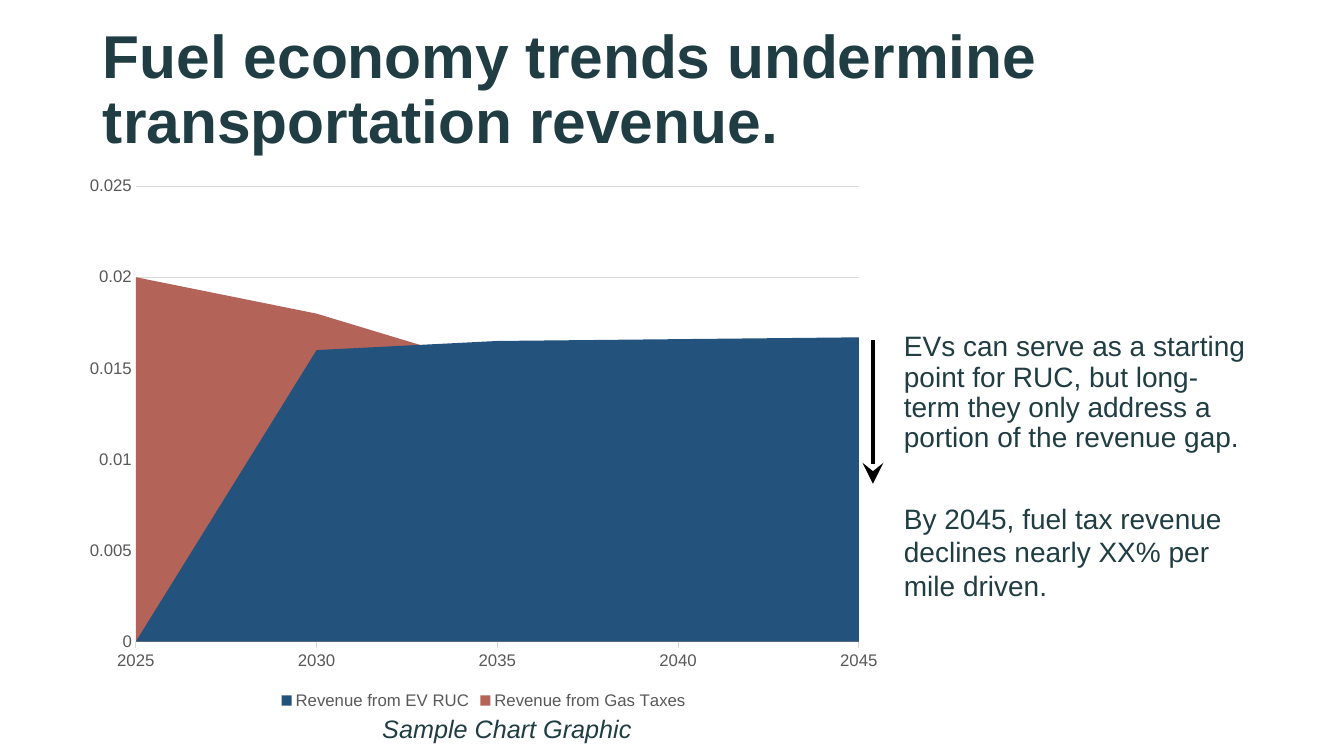
import pptx
import pptx.util
import pptx.chart.data
import pptx.dml.color
import pptx.enum.chart
import pptx.enum.shapes
import pptx.enum.text
import pptx.oxml
import pptx.oxml.ns
from pptx.util import Cm, Pt

FONT = "Arial"
INK, GREY, RULE = "1F3D42", "595959", "D9D9D9"
ALIGN = pptx.enum.text.PP_ALIGN
FIT = pptx.enum.text.MSO_AUTO_SIZE

TITLE = "Fuel economy trends undermine transportation revenue."
TITLE_BOX = (2.34, 1.02, 28.96, 3.05)
# text, box in cm, font, paragraph format
NOTES = [
    ("EVs can serve as a starting point for RUC, but long-term they only "
     "address a portion of the revenue gap.",
     (22.53, 8.26, 9.19, 4.24), {"size": Pt(20)},
     {"line_spacing": 0.9, "space_before": Pt(10)}),
    ("By 2045, fuel tax revenue declines nearly XX% per mile driven.",
     (22.53, 12.5, 8.74, 2.82), {"size": Pt(20)}, {}),
    ("Sample Chart Graphic",
     (3.02, 17.86, 19.51, 1.02), {"size": Pt(18), "italic": True},
     {"alignment": ALIGN.CENTER}),
]
YEARS = ["2025", "2030", "2035", "2040", "2045"]
SERIES = [
    ("Revenue from EV RUC", "23527C", (0, 0.016, 0.0165, 0.0166, 0.0167)),
    ("Revenue from Gas Taxes", "B36358", (0.02, 0.018, 0.015, 0.01, 0.009)),
]
CHART_BOX = (1.85, 4.19, 20.68, 13.79)
ARROW = (22, 8.56, 22, 12.19)


def rgb(code):
    return pptx.dml.color.RGBColor.from_string(code)


def put(item, values):
    """Set each named attribute on item."""
    for name, value in values.items():
        setattr(item, name, value)


def style(font, color=INK, **values):
    put(font, {"name": FONT, **values})
    font.color.rgb = rgb(color)


def cms(box):
    return [Cm(n) for n in box]


def rule(line):
    put(line, {"width": Pt(0.75)})
    line.color.rgb = rgb(RULE)


def add_title(slide):
    title = slide.shapes.title
    put(title, dict(zip(("left", "top", "width", "height"), cms(TITLE_BOX))))
    frame = title.text_frame
    frame.text = TITLE
    put(frame, {"auto_size": FIT.NONE, "word_wrap": True,
                "vertical_anchor": pptx.enum.text.MSO_ANCHOR.BOTTOM})
    para = frame.paragraphs[0]
    put(para, {"alignment": ALIGN.LEFT, "line_spacing": 0.9})
    style(para.runs[0].font, size=Pt(43.2), bold=True)


def add_note(slide, text, box, font, form):
    frame = slide.shapes.add_textbox(*cms(box)).text_frame
    frame.text = text
    put(frame, {"word_wrap": True, "auto_size": FIT.NONE})
    para = frame.paragraphs[0]
    put(para, form)
    style(para.runs[0].font, **font)


def add_arrow(slide):
    kind = pptx.enum.shapes.MSO_CONNECTOR.STRAIGHT
    arrow = slide.shapes.add_connector(kind, *cms(ARROW))
    arrow.line.width = Pt(3)
    arrow.line.color.rgb = rgb("000000")
    make = pptx.oxml.ns.qn
    props = arrow.line._get_or_add_ln().getparent()
    tip = props.find(make("a:ln")).makeelement(
        make("a:tailEnd"), {"type": "stealth", "w": "lg", "len": "lg"})
    props.find(make("a:ln")).append(tip)
    props.append(props.makeelement(make("a:effectLst"), {}))


def add_areas(slide):
    enum = pptx.enum.chart
    data = pptx.chart.data.CategoryChartData()
    data.categories = YEARS
    for name, _, values in SERIES:
        data.add_series(name, values)
    chart = slide.shapes.add_chart(
        enum.XL_CHART_TYPE.AREA, *cms(CHART_BOX), data).chart
    put(chart, {"has_title": False, "has_legend": True})
    style(chart.font, "000000", size=Pt(10))
    put(chart.legend, {"position": enum.XL_LEGEND_POSITION.BOTTOM,
                       "include_in_layout": False})
    style(chart.legend.font, GREY, size=Pt(12))
    plot = chart.plots[0]
    plot.vary_by_categories = False
    for area, (_, color, _) in zip(plot.series, SERIES):
        area.format.fill.solid()
        area.format.fill.fore_color.rgb = rgb(color)
        area.format.line.fill.background()

    cat, val = chart.category_axis, chart.value_axis
    marks = enum.XL_TICK_MARK
    for axis, tick in ((cat, marks.OUTSIDE), (val, marks.NONE)):
        put(axis, {"major_tick_mark": tick, "minor_tick_mark": marks.NONE})
        style(axis.tick_labels.font, GREY, size=Pt(12))
    cat.has_major_gridlines = False
    rule(cat.format.line)
    put(val, {"minimum_scale": 0, "maximum_scale": 0.025,
              "major_unit": 0.005, "has_major_gridlines": True})
    put(val.tick_labels, {"number_format": "General",
                          "number_format_is_linked": False})
    rule(val.major_gridlines.format.line)
    val.format.line.fill.background()
    # Areas start right on the value axis
    for cross in val._element.findall(pptx.oxml.ns.qn("c:crossBetween")):
        cross.set("val", "midCat")


def main():
    deck = pptx.Presentation()
    put(deck, {"slide_width": Cm(33.87), "slide_height": Cm(19.05)})
    slide = deck.slides.add_slide(deck.slide_layouts[5])
    add_title(slide)
    add_arrow(slide)
    for note in NOTES[:2]:
        add_note(slide, *note)
    add_areas(slide)
    add_note(slide, *NOTES[2])
    deck.save("out.pptx")


if __name__ == "__main__":
    main()
